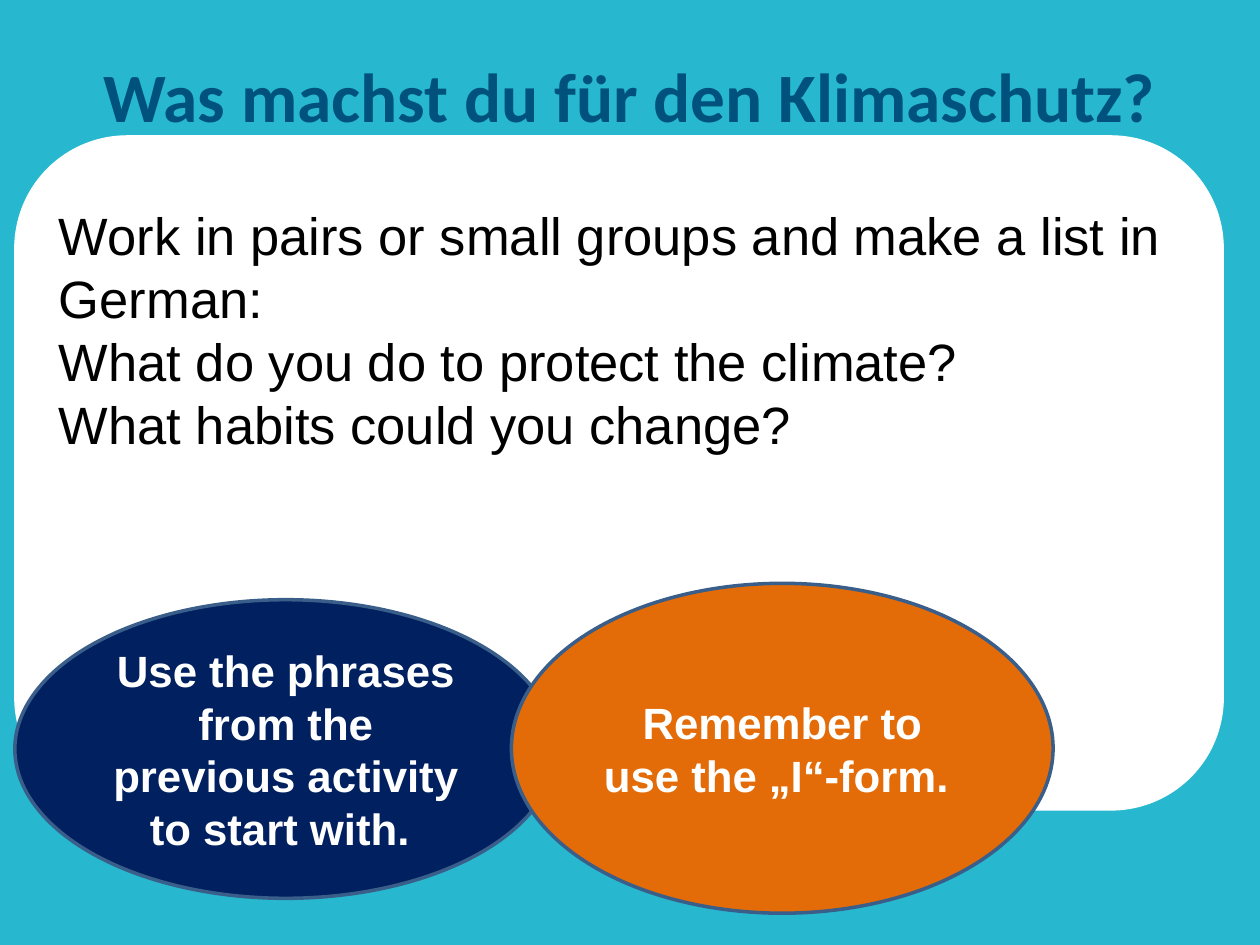
import dataclasses

import pptx
import pptx.dml.color
import pptx.enum.shapes
import pptx.enum.text
import pptx.util

Cm = pptx.util.Cm
Pt = pptx.util.Pt
Kind = pptx.enum.shapes.MSO_SHAPE
Align = pptx.enum.text.PP_ALIGN
Anchor = pptx.enum.text.MSO_ANCHOR


@dataclasses.dataclass(frozen=True)
class Theme:
    back: str = "27B8CF"
    white: str = "FFFFFF"
    black: str = "000000"
    title: str = "00527D"
    navy: str = "002060"
    orange: str = "E36C09"
    edge: str = "395E89"
    head: str = "Calibri"
    body: str = "Arial"
    big: float = 39.6
    mid: float = 30
    small: float = 25


def paint(fill, color):
    fill.solid()
    fill.fore_color.rgb = pptx.dml.color.RGBColor.from_string(color)


class Page:
    def __init__(self, slide, theme):
        self.slide = slide
        self.theme = theme
        paint(slide.background.fill, theme.back)

    def label(self, frame, lines, font, size, color, bold=False,
              align=Align.LEFT, anchor=Anchor.MIDDLE):
        frame.word_wrap = True
        frame.vertical_anchor = anchor
        for n, line in enumerate(lines):
            para = frame.paragraphs[0] if n == 0 else frame.add_paragraph()
            para.alignment = align
            run = para.add_run()
            run.text = line
            run.font.name = font
            run.font.size = Pt(size)
            run.font.bold = bold
            paint(run.font.fill, color)

    def shape(self, kind, box, fill, edge, width):
        item = self.slide.shapes.add_shape(kind, *map(Cm, box))
        item.shadow.inherit = False
        paint(item.fill, fill)
        paint(item.line.fill, edge)
        item.line.width = Pt(width)
        return item

    def panel(self, box):
        white = self.theme.white
        self.shape(Kind.ROUNDED_RECTANGLE, box, white, white, 0.75)

    def bubble(self, box, fill, text):
        look = self.theme
        item = self.shape(Kind.OVAL, box, fill, look.edge, 2)
        self.label(item.text_frame, [text], look.body, look.small,
                   look.white, bold=True, align=Align.CENTER)

    def title(self, box, text):
        look = self.theme
        item = self.slide.shapes.add_textbox(*map(Cm, box))
        self.label(item.text_frame, [text], look.head, look.big,
                   look.title, bold=True, align=Align.CENTER)

    def body(self, box, lines):
        look = self.theme
        item = self.slide.shapes.add_textbox(*map(Cm, box))
        self.label(item.text_frame, lines, look.body, look.mid,
                   look.black, anchor=Anchor.TOP)


def main():
    deck = pptx.Presentation()
    deck.slide_width, deck.slide_height = Cm(25.4), Cm(19.05)
    theme = Theme()
    page = Page(deck.slides.add_slide(deck.slide_layouts[6]), theme)

    page.panel((0.3, 2.74, 24.36, 13.59))
    page.title((0.3, 0.33, 24.79, 3.18), "Was machst du für den Klimaschutz?")
    page.bubble((0.3, 12.09, 10.92, 6.02), theme.navy,
                "Use the phrases from the previous activity to start with. ")
    page.body((0.94, 3.96, 23.72, 5.38), [
        "Work in pairs or small groups and make a list in German:",
        "What do you do to protect the climate?",
        "What habits could you change?",
    ])
    page.bubble((10.31, 11.76, 10.92, 6.65), theme.orange,
                "Remember to use the „I“-form. ")
    deck.save("out.pptx")


if __name__ == "__main__":
    main()
